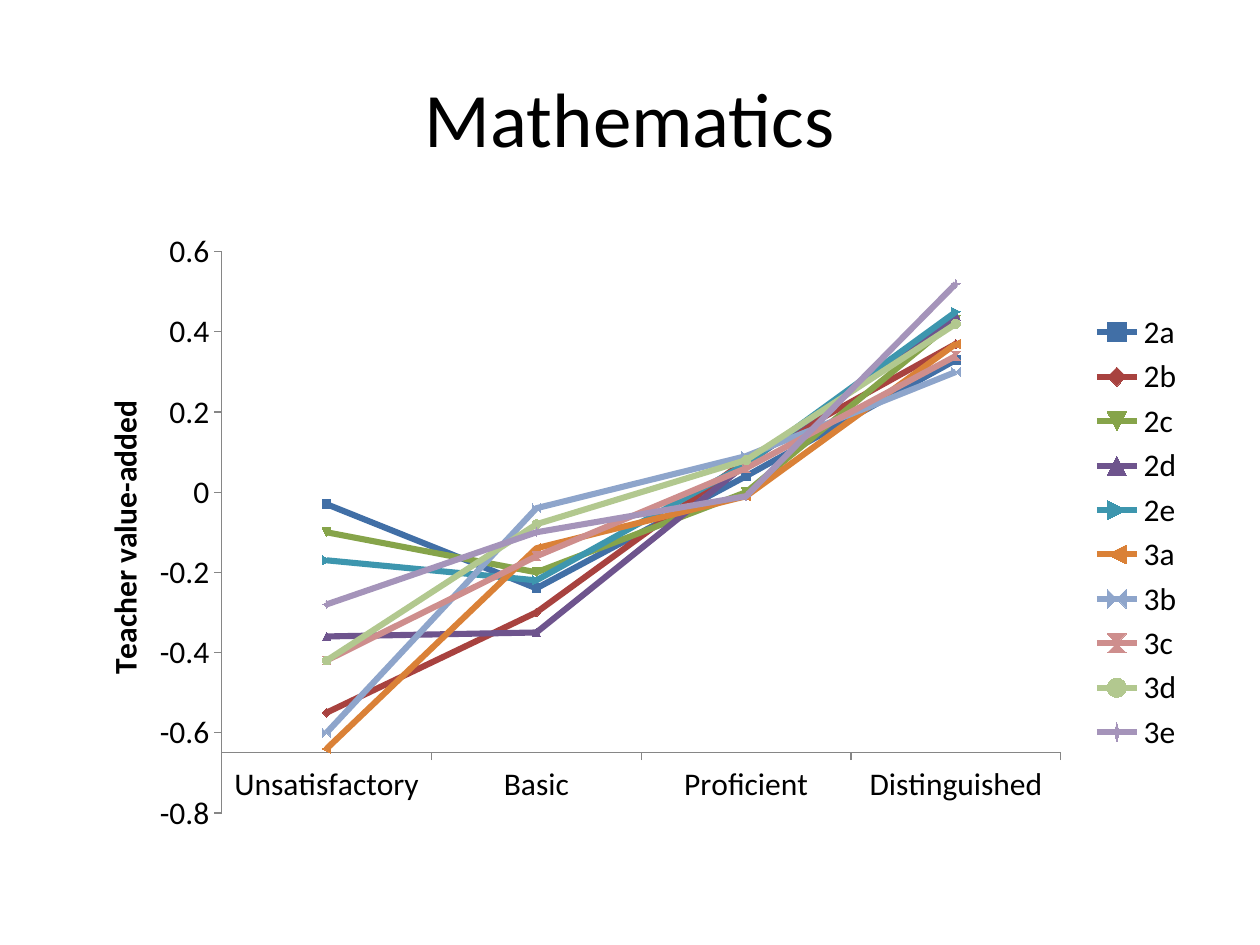
import pptx
import pptx.chart.data
import pptx.dml.color
import pptx.enum.chart
import pptx.enum.text
import pptx.oxml
import pptx.oxml.ns
import pptx.util

HEADING = "Mathematics"
AXIS_TITLE = "Teacher value-added"
RATINGS = ["Unsatisfactory", "Basic", "Proficient", "Distinguished"]
COMPONENTS = {
    "2a": (-0.03, -0.24, 0.04, 0.33),
    "2b": (-0.55, -0.3, 0.08, 0.37),
    "2c": (-0.1, -0.2, 0, 0.43),
    "2d": (-0.36, -0.35, 0.07, 0.44),
    "2e": (-0.17, -0.22, 0.07, 0.45),
    "3a": (-0.64, -0.14, -0.01, 0.37),
    "3b": (-0.6, -0.04, 0.09, 0.3),
    "3c": (-0.42, -0.16, 0.06, 0.34),
    "3d": (-0.42, -0.08, 0.08, 0.42),
    "3e": (-0.28, -0.1, -0.01, 0.52),
}
COLORS = {
    "text": "000000", "axis": "868686",
    "2a": "416FA6", "2b": "A8423F", "2c": "86A44A", "2d": "6E548D",
    "2e": "3D96AE", "3a": "DA8137", "3b": "8EA5CB", "3c": "CE8E8D",
    "3d": "B2C88F", "3e": "A594BA",
}
FONT = "Calibri"
WIDTH, HEIGHT = pptx.util.Inches(10), pptx.util.Inches(7.5)
MARGIN, CONTENT = 0.05, 0.9
VALUE_SCALE = {"minimum_scale": -0.8, "maximum_scale": 0.6, "major_unit": 0.2,
               "has_major_gridlines": False, "crosses_at": -0.65, "has_title": True}
PLOT_PLACE = {"x": 0.14, "y": 0.05, "w": 0.74, "h": 0.9}
AXIS_TITLE_PLACE = {"x": 0.03, "y": 0.28}


def color(name):
    return pptx.dml.color.RGBColor.from_string(COLORS[name])


def apply(target, values):
    for key, value in values.items():
        setattr(target, key, value)


def style_font(font, size, bold=False):
    apply(font, {"name": FONT, "size": pptx.util.Pt(size), "bold": bold})
    font.color.rgb = color("text")


def band(top, height):
    return (int(WIDTH * MARGIN), int(HEIGHT * top),
            int(WIDTH * CONTENT), int(HEIGHT * height))


def layout(place, inner=False):
    target = '<c:layoutTarget val="inner"/>' if inner else ""
    modes = "".join(f'<c:{key}Mode val="edge"/>' for key in "xy")
    sizes = "".join(f'<c:{key} val="{value}"/>' for key, value in place.items())
    return pptx.oxml.parse_xml(
        f'<c:layout {pptx.oxml.ns.nsdecls("c")}><c:manualLayout>'
        f'{target}{modes}{sizes}</c:manualLayout></c:layout>')


def set_layout(parent, element, after=None):
    for old in parent.findall(pptx.oxml.ns.qn("c:layout")):
        parent.remove(old)
    if after is None:
        parent.insert(0, element)
    else:
        after.addnext(element)


def add_heading(slide):
    heading = slide.shapes.add_textbox(*band(0.04, 1 / 6)).text_frame
    apply(heading, {"word_wrap": True, "text": HEADING,
                    "vertical_anchor": pptx.enum.text.MSO_ANCHOR.MIDDLE})
    line = heading.paragraphs[0]
    line.alignment = pptx.enum.text.PP_ALIGN.CENTER
    style_font(line.runs[0].font, 44)


def add_value_chart(slide):
    scores = pptx.chart.data.CategoryChartData()
    scores.categories = RATINGS
    for component, values in COMPONENTS.items():
        scores.add_series(component, values)
    chart = slide.shapes.add_chart(
        pptx.enum.chart.XL_CHART_TYPE.LINE_MARKERS, *band(7 / 30, 0.66), scores).chart
    apply(chart, {"has_title": False, "has_legend": True})
    apply(chart.legend, {"position": pptx.enum.chart.XL_LEGEND_POSITION.RIGHT,
                         "include_in_layout": False})
    style_font(chart.font, 10)
    style_font(chart.legend.font, 18)

    ratings, added = chart.category_axis, chart.value_axis
    apply(added, VALUE_SCALE)
    for axis in (ratings, added):
        axis.major_tick_mark = pptx.enum.chart.XL_TICK_MARK.OUTSIDE
        axis.minor_tick_mark = pptx.enum.chart.XL_TICK_MARK.NONE
        axis.format.line.color.rgb = color("axis")
        axis.format.line.width = pptx.util.Pt(0.75)
        style_font(axis.tick_labels.font, 18)
    apply(added.tick_labels, {"number_format": "General",
                              "number_format_is_linked": False})

    caption = added.axis_title.text_frame
    caption.text = AXIS_TITLE
    style_font(caption.paragraphs[0].runs[0].font, 18, bold=True)

    chart.plots[0].vary_by_categories = False
    for series in chart.plots[0].series:
        series.smooth = False
        series.format.line.width = pptx.util.Pt(3.5)
        series.marker.size = 5
        series.marker.format.fill.solid()
        for part in (series.format.line.color, series.marker.format.fill.fore_color,
                     series.marker.format.line.color):
            part.rgb = color(series.name)

    tag = pptx.oxml.ns.qn
    root = chart.element
    set_layout(root.find(".//" + tag("c:plotArea")), layout(PLOT_PLACE, inner=True))
    title = root.find(".//" + tag("c:valAx")).find(tag("c:title"))
    set_layout(title, layout(AXIS_TITLE_PLACE), after=title.find(tag("c:tx")))


def main():
    deck = pptx.Presentation()
    apply(deck, {"slide_width": WIDTH, "slide_height": HEIGHT})
    slide = deck.slides.add_slide(deck.slide_layouts[6])
    add_heading(slide)
    add_value_chart(slide)
    deck.save("out.pptx")


if __name__ == "__main__":
    main()
